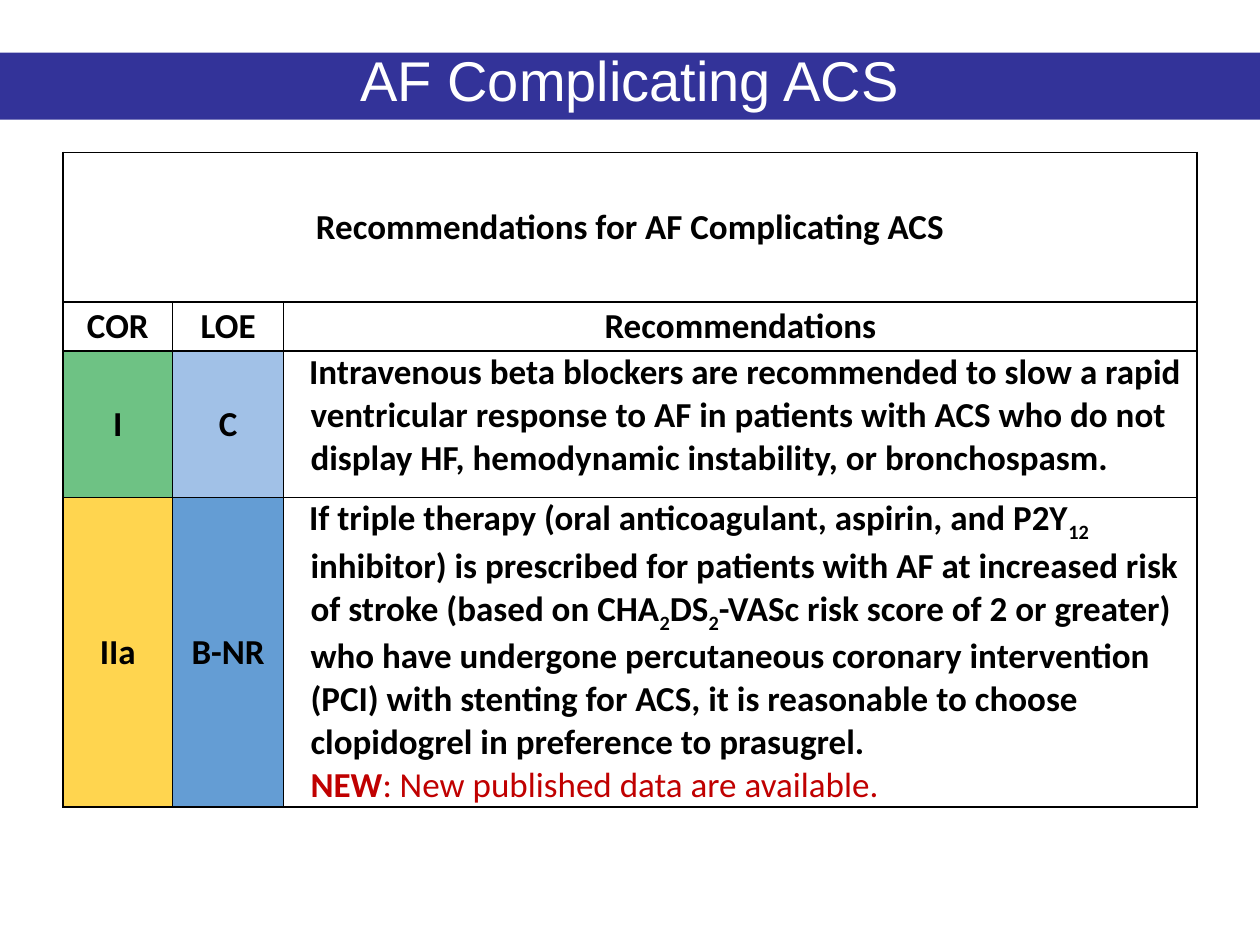
from lxml import etree
from pptx import Presentation
from pptx.dml.color import RGBColor
from pptx.enum.text import MSO_ANCHOR, MSO_AUTO_SIZE, PP_ALIGN
from pptx.oxml.ns import qn
from pptx.util import Cm, Pt

CENTER, LEFT = PP_ALIGN.CENTER, PP_ALIGN.LEFT
TOP, MIDDLE = MSO_ANCHOR.TOP, MSO_ANCHOR.MIDDLE
FIXED = MSO_AUTO_SIZE.NONE

HUES = {
    "band": "333399", "white": "FFFFFF", "ink": "000000", "new": "C00000",
    "green": "6EC284", "pale": "A1C1E7", "gold": "FFD54F", "blue": "649DD4",
}
COLS = [2.21, 2.24, 18.41]
ROWS = [3.02, 0.99, 2.95, 5.97]
HEADS = ["COR", "LOE", "Recommendations"]
# Each grade: class, level, their fills, and the advice; _x_ marks a subscript.
GRADES = [
    ("I", "C", "green", "pale",
     "Intravenous beta blockers are recommended to slow a rapid ventricular "
     "response to AF in patients with ACS who do not display HF, hemodynamic "
     "instability, or bronchospasm."),
    ("IIa", "B-NR", "gold", "blue",
     "If triple therapy (oral anticoagulant, aspirin, and P2Y_12_ inhibitor) "
     "is prescribed for patients with AF at increased risk of stroke (based "
     "on CHA_2_DS_2_-VASc risk score of 2 or greater) who have undergone "
     "percutaneous coronary intervention (PCI) with stenting for ACS, it is "
     "reasonable to choose clopidogrel in preference to prasugrel."),
]


class Deck:
    """Holds the style and the current slide."""

    def __init__(self, show):
        self.slide = show.slides.add_slide(show.slide_layouts[5])
        self.head, self.body = "Arial", "Calibri"

    def font(self, run, name, size, hue, bold):
        run.font.name, run.font.size, run.font.bold = name, Pt(size), bold
        run.font.color.rgb = RGBColor.from_string(HUES[hue])

    def title(self, text, left, top, width, height):
        box = self.slide.shapes.title
        box.left, box.top = Cm(left), Cm(top)
        box.width, box.height = Cm(width), Cm(height)
        box.fill.solid()
        box.fill.fore_color.rgb = RGBColor.from_string(HUES["band"])
        frame = box.text_frame
        frame.text = text
        frame.auto_size, frame.vertical_anchor = FIXED, TOP
        para = frame.paragraphs[0]
        para.alignment, para.line_spacing = CENTER, 0.8
        self.font(para.runs[0], self.head, 32, "white", False)

    def table(self, left, top, cols, rows):
        grid = self.slide.shapes.add_table(
            len(rows), len(cols), Cm(left), Cm(top),
            Cm(sum(cols)), Cm(sum(rows))).table
        for col, width in zip(grid.columns, cols):
            col.width = Cm(width)
        for row, height in zip(grid.rows, rows):
            row.height = Cm(height)
        for cell in grid.iter_cells():
            self.border(cell)
            cell.fill.background()
            cell.margin_left = cell.margin_right = Cm(0.03)
            cell.margin_top = cell.margin_bottom = 0
        return grid

    def border(self, cell):
        props = cell._tc.get_or_add_tcPr()
        for side in ("lnL", "lnR", "lnT", "lnB"):
            line = etree.SubElement(props, qn("a:" + side), w=str(Pt(1)))
            fill = etree.SubElement(line, qn("a:solidFill"))
            etree.SubElement(fill, qn("a:srgbClr"), val=HUES["ink"])

    def label(self, cell, text, hue=None):
        cell.text_frame.text = text
        cell.vertical_anchor = MIDDLE
        para = cell.text_frame.paragraphs[0]
        para.alignment = CENTER
        self.font(para.runs[0], self.body, 20, "ink", True)
        if hue:
            cell.fill.solid()
            cell.fill.fore_color.rgb = RGBColor.from_string(HUES[hue])

    def indent(self, para, first):
        para.alignment = LEFT
        props = para._p.get_or_add_pPr()
        props.set("marL", str(Cm(0.51)))
        props.set("indent", str(Cm(first)))

    def advice(self, cell, text):
        cell.vertical_anchor = TOP
        para = cell.text_frame.paragraphs[0]
        self.indent(para, -0.03)
        for i, part in enumerate(text.split("_")):
            run = para.add_run()
            run.text = part
            self.font(run, self.body, 20, "ink", True)
            if i % 2:
                run.font._element.set("baseline", "-25000")

    def remark(self, cell, lead, rest):
        para = cell.text_frame.add_paragraph()
        self.indent(para, -0.51)
        for text, bold in ((lead, True), (rest, False)):
            run = para.add_run()
            run.text = text
            self.font(run, self.body, 20, "new", bold)


def main():
    show = Presentation()
    show.slide_width, show.slide_height = Cm(25.4), Cm(19.05)
    deck = Deck(show)
    deck.title("AF Complicating ACS", 0, 1.06, 25.4, 1.35)

    grid = deck.table(1.27, 3.07, COLS, ROWS)
    grid.cell(0, 0).merge(grid.cell(0, 2))
    deck.label(grid.cell(0, 0), "Recommendations for AF Complicating ACS")
    for i, text in enumerate(HEADS):
        deck.label(grid.cell(1, i), text)
    for i, (cor, loe, left, right, text) in enumerate(GRADES, 2):
        deck.label(grid.cell(i, 0), cor, left)
        deck.label(grid.cell(i, 1), loe, right)
        deck.advice(grid.cell(i, 2), text)
    deck.remark(grid.cell(3, 2), "\tNEW", ": New published data are available.")
    show.save("out.pptx")


if __name__ == "__main__":
    main()
